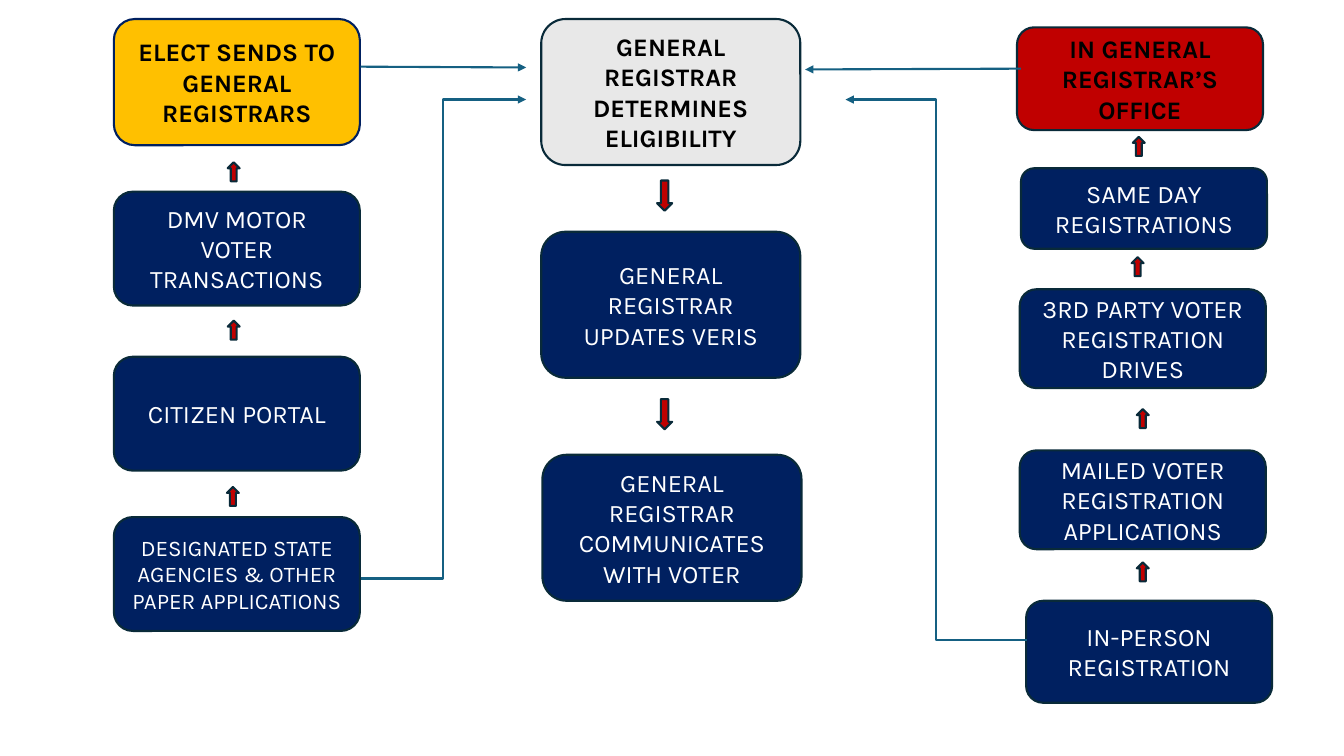
from dataclasses import dataclass

from lxml import etree
from pptx import Presentation
from pptx.dml.color import RGBColor
from pptx.enum.shapes import MSO_CONNECTOR, MSO_SHAPE
from pptx.enum.text import MSO_ANCHOR, PP_ALIGN
from pptx.oxml.ns import qn
from pptx.util import Cm, Pt

ROUND = MSO_SHAPE.ROUNDED_RECTANGLE
UP = MSO_SHAPE.UP_ARROW
DOWN = MSO_SHAPE.DOWN_ARROW
LINE = MSO_CONNECTOR.STRAIGHT
BENT = MSO_CONNECTOR.ELBOW
CENTER = PP_ALIGN.CENTER
MIDDLE = MSO_ANCHOR.MIDDLE


@dataclass
class Theme:
    font: str = "Karla"
    navy: str = "002060"
    gold: str = "FFC000"
    gray: str = "E8E8E8"
    red: str = "C00000"
    edge: str = "092A39"
    link: str = "156082"
    white: str = "FFFFFF"
    black: str = "000000"
    body: float = 18
    small: float = 16
    stroke: float = 1.5


theme = Theme()

deck = Presentation()
deck.slide_width = Cm(33.87)
deck.slide_height = Cm(19.05)
slide = deck.slides.add_slide(deck.slide_layouts[6])


def add_shape(kind, left, top, width, height, fill, edge=theme.edge):
    shape = slide.shapes.add_shape(kind, Cm(left), Cm(top), Cm(width), Cm(height))
    shape.shadow.inherit = False
    shape.fill.solid()
    shape.fill.fore_color.rgb = RGBColor.from_string(fill)
    shape.line.color.rgb = RGBColor.from_string(edge)
    shape.line.width = Pt(theme.stroke)
    return shape


heads = [
    (2.87, 0.48, 6.2, 3.18, theme.gold, theme.navy, "ELECT SENDS TO GENERAL REGISTRARS"),
    (13.64, 0.48, 6.53, 3.68, theme.gray, theme.edge, "GENERAL REGISTRAR DETERMINES ELIGIBILITY"),
    (25.63, 0.69, 6.2, 2.59, theme.red, theme.edge, "IN GENERAL REGISTRAR’S OFFICE"),
]
steps = [
    (2.87, 4.83, 6.2, 2.87, theme.body, ["DMV MOTOR VOTER TRANSACTIONS"]),
    (2.87, 8.99, 6.2, 2.87, theme.body, ["CITIZEN PORTAL"]),
    (2.87, 13.03, 6.2, 2.87, theme.small, ["DESIGNATED STATE AGENCIES & OTHER PAPER APPLICATIONS"]),
    (13.64, 5.84, 6.53, 3.68, theme.body, ["GENERAL REGISTRAR", "UPDATES VERIS"]),
    (13.67, 11.46, 6.53, 3.68, theme.body, ["GENERAL REGISTRAR", "COMMUNICATES WITH VOTER"]),
    (25.73, 4.24, 6.2, 2.03, theme.body, ["SAME DAY REGISTRATIONS"]),
    (25.7, 7.29, 6.2, 2.49, theme.body, ["3RD PARTY VOTER REGISTRATION DRIVES"]),
    (25.7, 11.35, 6.2, 2.49, theme.body, ["MAILED VOTER REGISTRATION APPLICATIONS"]),
    (25.86, 15.14, 6.2, 2.57, theme.body, ["IN-PERSON REGISTRATION"]),
]
boxes = [
    (place, fill, edge, theme.black, True, theme.body, [text])
    for *place, fill, edge, text in heads
] + [
    (place, theme.navy, theme.edge, theme.white, False, size, texts)
    for *place, size, texts in steps
]
for place, fill, edge, color, bold, size, texts in boxes:
    frame = add_shape(ROUND, *place, fill, edge).text_frame
    frame.word_wrap = True
    frame.vertical_anchor = MIDDLE
    for index, text in enumerate(texts):
        para = frame.add_paragraph() if index else frame.paragraphs[0]
        para.alignment = CENTER
        run = para.add_run()
        run.text = text
        run.font.name = theme.font
        run.font.size = Pt(size)
        run.font.bold = bold
        run.font.color.rgb = RGBColor.from_string(color)

arrows = [
    (UP, 0.3, 0.48, [
        (5.74, 4.09), (5.74, 8.08), (5.72, 12.27),
        (28.55, 3.45), (28.52, 6.48), (28.65, 10.31), (28.65, 14.17),
    ]),
    (DOWN, 0.38, 0.76, [(16.56, 4.55), (16.56, 10.06)]),
]
for kind, width, height, spots in arrows:
    for left, top in spots:
        add_shape(kind, left, top, width, height, theme.red)

links = [
    (LINE, 9.09, 1.68, 13.26, 1.7),
    (LINE, 25.73, 1.73, 20.29, 1.75),
    (BENT, 9.09, 14.58, 13.26, 2.51),
    (BENT, 25.88, 16.13, 21.31, 2.51),
]
for kind, *ends in links:
    link = slide.shapes.add_connector(kind, *[Cm(end) for end in ends])
    link.line.color.rgb = RGBColor.from_string(theme.link)
    link.line.width = Pt(theme.stroke)
    props = link.line.color and link._element.spPr
    etree.SubElement(props.find(qn("a:ln")), qn("a:tailEnd"), type="triangle")
    etree.SubElement(props, qn("a:effectLst"))

deck.save("out.pptx")
